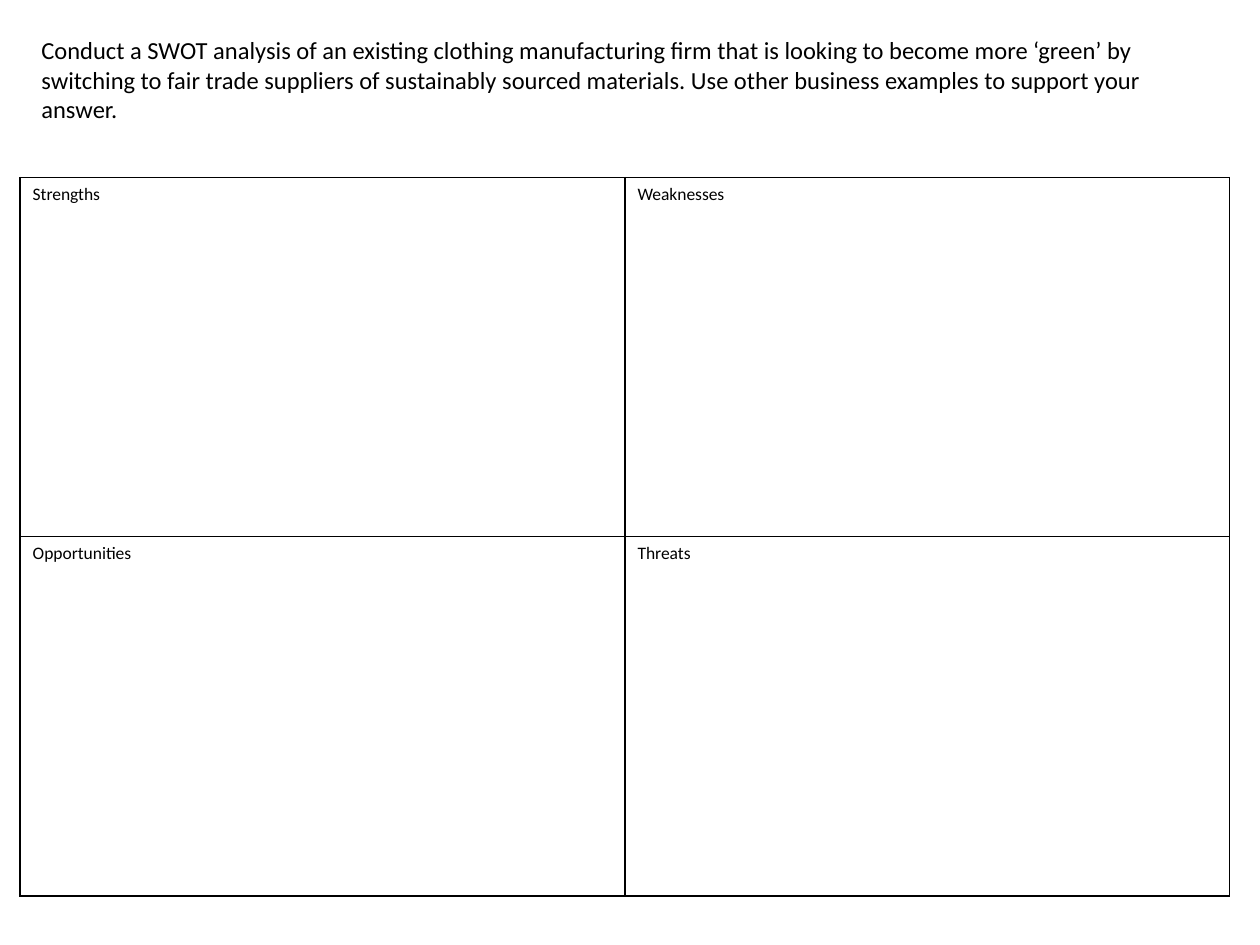
from lxml import etree
from pptx import Presentation
from pptx.dml.color import RGBColor
from pptx.oxml.ns import qn
from pptx.util import Inches, Pt

QUESTION = (
    "Conduct a SWOT analysis of an existing clothing manufacturing firm that is "
    "looking to become more ‘green’ by switching to fair trade suppliers of "
    "sustainably sourced materials. Use other business examples to support your answer."
)
SWOT = [
    ["Strengths", "Weaknesses"],
    ["Opportunities", "Threats"],
]
BLACK = "000000"
COLUMN_WIDTH, ROW_HEIGHT = 4.8, 2.85


def color(value):
    return RGBColor.from_string(value)


def write_text(text_frame, text, size, font="Calibri", fill=BLACK):
    run = text_frame.paragraphs[0].add_run()
    run.text = text
    run.font.size = Pt(size)
    run.font.name = font
    run.font.color.rgb = color(fill)


def add_borders(cell, width=1, line=BLACK):
    properties = cell._tc.get_or_add_tcPr()
    for index, side in enumerate(("lnL", "lnR", "lnT", "lnB")):
        border = etree.Element(qn(f"a:{side}"), w=str(Pt(width)))
        fill = etree.SubElement(border, qn("a:solidFill"))
        etree.SubElement(fill, qn("a:srgbClr"), val=line)
        properties.insert(index, border)


presentation = Presentation()
presentation.slide_width, presentation.slide_height = Inches(10), Inches(7.5)
slide = presentation.slides.add_slide(presentation.slide_layouts[6])

# SWOT grid
rows, columns = len(SWOT), len(SWOT[0])
table = slide.shapes.add_table(
    rows, columns, Inches(0.16), Inches(1.41),
    Inches(columns * COLUMN_WIDTH), Inches(rows * ROW_HEIGHT),
).table
table.first_row = table.horz_banding = False
for row, labels in enumerate(SWOT):
    for column, label in enumerate(labels):
        cell = table.cell(row, column)
        cell.fill.background()
        add_borders(cell)
        write_text(cell.text_frame, label, size=10)

# Question above the grid
question = slide.shapes.add_textbox(Inches(0.23), Inches(0.23), Inches(9.53), Inches(0.81))
question.text_frame.word_wrap = True
write_text(question.text_frame, QUESTION, size=14)

presentation.save("out.pptx")
